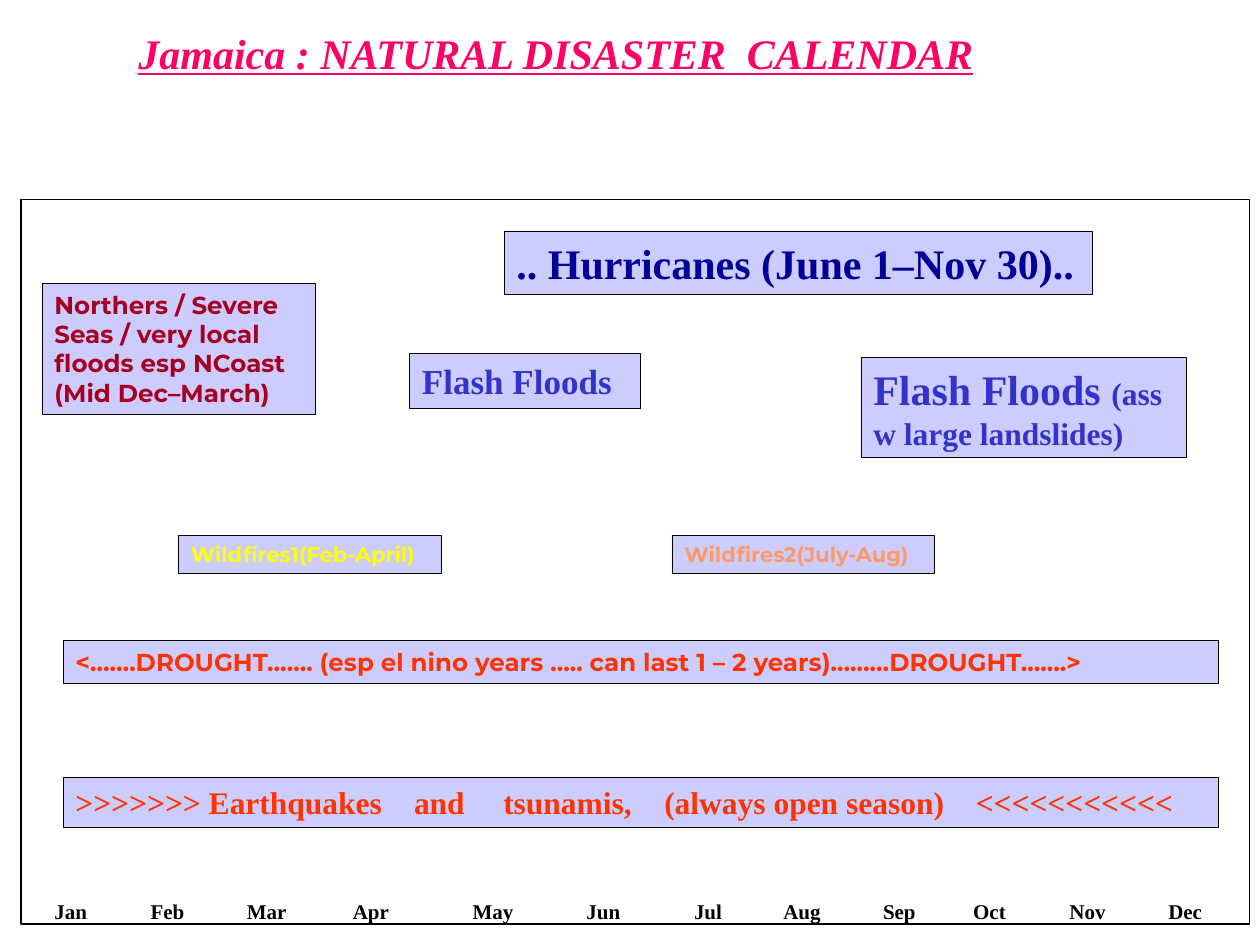
from pptx import Presentation
from pptx.dml.color import RGBColor
from pptx.enum.shapes import MSO_SHAPE as Shape
from pptx.enum.text import MSO_ANCHOR as Anchor, MSO_AUTO_SIZE as AutoSize, PP_ALIGN as Align
from pptx.oxml.ns import qn
from pptx.util import Pt
from lxml.etree import SubElement

SERIF = "Times New Roman"
SANS = "Montserrat"


def color(code):
    return RGBColor.from_string(code)


def add_text(text, at, size=12, font=SERIF, ink="000000", fill=None,
             slanted=False, tail=None, tail_size=None, tabs=()):
    area = [Pt(value) for value in at]
    if fill:
        box = page.shapes.add_shape(Shape.RECTANGLE, *area)
        box.shadow.inherit = False
        box.fill.solid()
        box.fill.fore_color.rgb = color(fill)
        box.line.color.rgb = color("000000")
        box.line.width = Pt(0.25)
    else:
        box = page.shapes.add_textbox(*area)
    frame = box.text_frame
    frame.word_wrap = True
    frame.auto_size = AutoSize.SHAPE_TO_FIT_TEXT
    frame.vertical_anchor = Anchor.TOP
    for index, line in enumerate(text.split("\n")):
        para = frame.add_paragraph() if index else frame.paragraphs[0]
        para.alignment = Align.LEFT
        pieces = [(line, size)] + ([(tail, tail_size)] if tail else [])
        for piece, points in pieces:
            span = para.add_run()
            span.text = piece
            span.font.name = font
            span.font.size = Pt(points)
            span.font.bold = True
            span.font.color.rgb = color(ink)
            if slanted:
                span.font.italic = True
                span.font.underline = True
        if tabs:
            stops = SubElement(para._p.get_or_add_pPr(), qn("a:tabLst"))
            for stop in tabs:
                SubElement(stops, qn("a:tab"), pos=str(Pt(stop)), algn="l")


deck = Presentation()
deck.slide_width = Pt(720)
deck.slide_height = Pt(540)
page = deck.slides.add_slide(deck.slide_layouts[6])

calendar = page.shapes.add_shape(Shape.RECTANGLE, Pt(12), Pt(114), Pt(702), Pt(414))
calendar.shadow.inherit = False
calendar.fill.background()
calendar.line.color.rgb = color("000000")
calendar.line.width = Pt(0.75)

hazards = [
    (".. Hurricanes (June 1–Nov 30)..", (288, 132, 336, 36),
     dict(size=24, ink="000099")),
    ("Northers / Severe Seas / very local floods esp NCoast\n(Mid Dec–March)",
     (24, 162, 156, 74.5), dict(size=14, font=SANS, ink="A50021")),
    ("Flash Floods", (234, 202, 132, 31.5), dict(size=20, ink="3333CC")),
    ("Flash Floods ", (492, 204, 186, 57.5),
     dict(size=24, ink="3333CC", tail="(ass w large landslides)", tail_size=18)),
    ("Wildfires1(Feb-April)", (102, 306, 150, 21.8), dict(font=SANS, ink="FFFF00")),
    ("Wildfires2(July-Aug)", (384, 306, 150, 21.8), dict(font=SANS, ink="FF9966")),
    ("<…….DROUGHT……. (esp el nino years ….. can last 1 – 2 years)………DROUGHT…….>",
     (36, 366, 660, 24.5), dict(size=14, font=SANS, ink="FF3300")),
    (">>>>>>> Earthquakes\tand\ttsunamis,\t(always open season)\t<<<<<<<<<<<",
     (36, 444, 660, 29), dict(size=18, ink="FF3300", tabs=(193.5, 244.5, 336.5, 514.5))),
]
for text, at, style in hazards:
    add_text(text, at, fill="CCCCFF", **style)

add_text("Jamaica : NATURAL DISASTER  CALENDAR", (72, 12, 516, 36),
         size=24, ink="FF0066", slanted=True)

months = "Jan Feb Mar Apr May Jun Jul Aug Sep Oct Nov Dec".split()
add_text("\t".join(months), (24, 510, 696, 21.8),
         tabs=(55, 110, 170.5, 239, 304, 365.5, 416.5, 473.5, 525, 580, 636.5))

deck.save("out.pptx")
